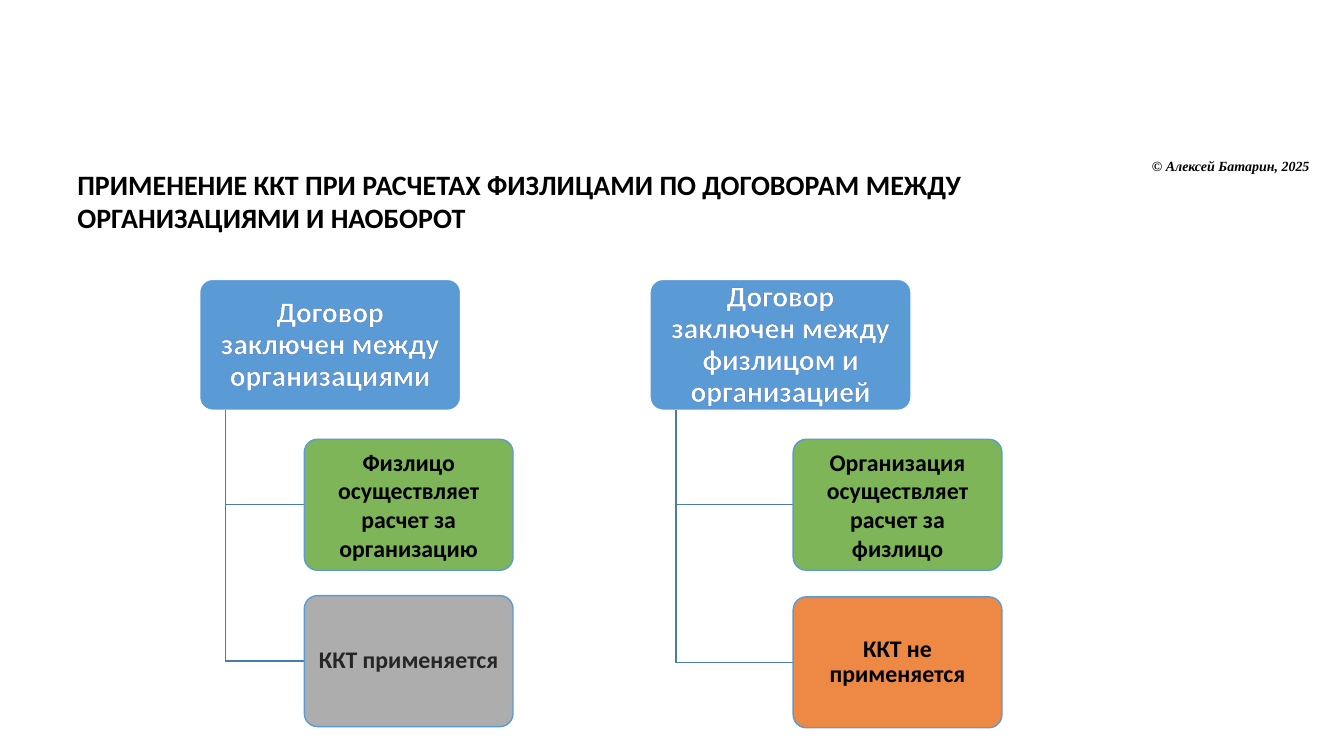
from lxml import etree
from pptx import Presentation, util as u
from pptx.dml.color import RGBColor
from pptx.enum import shapes, text
from pptx.oxml import ns

HEADER = dict(fill="5B9BD5", line="FFFFFF", color="FFFFFF", size=21, spacing=0.9,
              outline=("4472C4", 0.8))
PERSON = dict(fill="70AD47", alpha=90, line="5B9BD5", color="000000", size=17)
APPLIED = dict(fill="A5A5A5", alpha=90, line="5B9BD5", color="262626", size=17,
               spacing=0.9, outline=("FFFFFF", 1.06))
NOT_APPLIED = APPLIED | dict(fill="ED7D31", color="000000", outline=("FFFFFF", 0.75))

HEADER_WIDTH, CHILD_WIDTH, BOX_HEIGHT = 6.58, 5.26, 3.3
TRUNK_OFFSET = 0.66
COLUMNS = [
    dict(left=5.03, top=7.04, indent=2.64, header="Договор заключен между организациями",
         children=[(4.03, "Физлицо осуществляет расчет за организацию", PERSON),
                   (7.97, "ККТ применяется", APPLIED)]),
    dict(left=16.38, top=7.04, indent=3.61,
         header="Договор заключен между физлицом и организацией",
         children=[(4.03, "Организация осуществляет расчет за физлицо", PERSON),
                   (8, "ККТ не применяется", NOT_APPLIED)]),
]


def rgb(value):
    """Turn a hex string into a colour."""
    return RGBColor.from_string(value)


def apply(target, values):
    """Set every attribute named in a dict."""
    for name, value in values.items():
        setattr(target, name, value)


def add_child(parent, tag, **attributes):
    """Append an XML element with the given attributes."""
    return etree.SubElement(parent, ns.qn(tag), attributes)


def write(shape, words, color, font):
    """Write one formatted run into a shape and return its paragraph and run."""
    shape.text_frame.word_wrap = True
    para = shape.text_frame.paragraphs[0]
    span = para.add_run()
    span.text = words
    apply(span.font, font)
    span.font.color.rgb = rgb(color)
    return para, span


def add_label(page, box, words, font):
    """Place a plain text box."""
    label = page.shapes.add_textbox(*map(u.Cm, box))
    write(label, words, "000000", font)


def add_card(page, box, words, style):
    """Place a rounded card with centred bold text."""
    card = page.shapes.add_shape(shapes.MSO_SHAPE.ROUNDED_RECTANGLE, *map(u.Cm, box))
    card.adjustments[0] = 0.1
    card.shadow.inherit = False
    card.fill.solid()
    card.fill.fore_color.rgb = rgb(style["fill"])
    if "alpha" in style:
        fill_color = card.fill._xPr.find(".//" + ns.qn("a:srgbClr"))
        add_child(fill_color, "a:alpha", val=str(style["alpha"] * 1000))
    card.line.color.rgb = rgb(style["line"])
    card.line.width = u.Pt(1)
    apply(card.text_frame, dict(
        margin_left=u.Cm(0.2), margin_right=u.Cm(0.2), margin_top=u.Cm(0.16),
        margin_bottom=u.Cm(0.16), vertical_anchor=text.MSO_ANCHOR.MIDDLE))
    para, span = write(card, words, style["color"],
                       dict(name="Calibri", size=u.Pt(style["size"]), bold=True))
    apply(para, dict(alignment=text.PP_ALIGN.CENTER, line_spacing=style.get("spacing", 1.0)))
    if "outline" in style:
        color, width = style["outline"]
        properties = span.font._element
        outline = add_child(properties, "a:ln", w=str(int(u.Pt(width))))
        add_child(add_child(outline, "a:solidFill"), "a:srgbClr", val=color)
        properties.insert(0, outline)


def add_branch(page, left, top, right, bottom):
    """Draw a line down and then right to a card."""
    builder = page.shapes.build_freeform(u.Cm(left), u.Cm(top))
    builder.add_line_segments([(u.Cm(left), u.Cm(bottom)), (u.Cm(right), u.Cm(bottom))],
                              close=False)
    branch = builder.convert_to_shape()
    branch.shadow.inherit = False
    branch.fill.background()
    branch.line.color.rgb = rgb("497CAB")
    branch.line.width = u.Pt(1)


def add_column(page, left, top, indent, header, children):
    """Place a contract header with its branches and cards."""
    add_card(page, (left, top, HEADER_WIDTH, BOX_HEIGHT), header, HEADER)
    for drop, words, style in children:
        child_left, child_top = left + indent, top + drop
        add_branch(page, left + TRUNK_OFFSET, top + BOX_HEIGHT,
                   child_left, child_top + BOX_HEIGHT / 2)
        add_card(page, (child_left, child_top, CHILD_WIDTH, BOX_HEIGHT), words, style)


def main():
    """Build and save the deck."""
    deck = Presentation()
    apply(deck, dict(slide_width=u.Cm(33.87), slide_height=u.Cm(19.05)))
    page = deck.slides.add_slide(deck.slide_layouts[6])
    add_label(page, (1.7, 4.09, 22.99, 1.96),
              "ПРИМЕНЕНИЕ ККТ ПРИ РАСЧЕТАХ ФИЗЛИЦАМИ ПО ДОГОВОРАМ МЕЖДУ "
              "ОРГАНИЗАЦИЯМИ И НАОБОРОТ",
              dict(name="Calibri", size=u.Pt(20), bold=True))
    add_label(page, (28.78, 3.84, 5, 0.69), "© Алексей Батарин, 2025",
              dict(name="Times New Roman", size=u.Pt(10), bold=True, italic=True))
    for column in COLUMNS:
        add_column(page, **column)
    deck.save("out.pptx")


if __name__ == "__main__":
    main()
